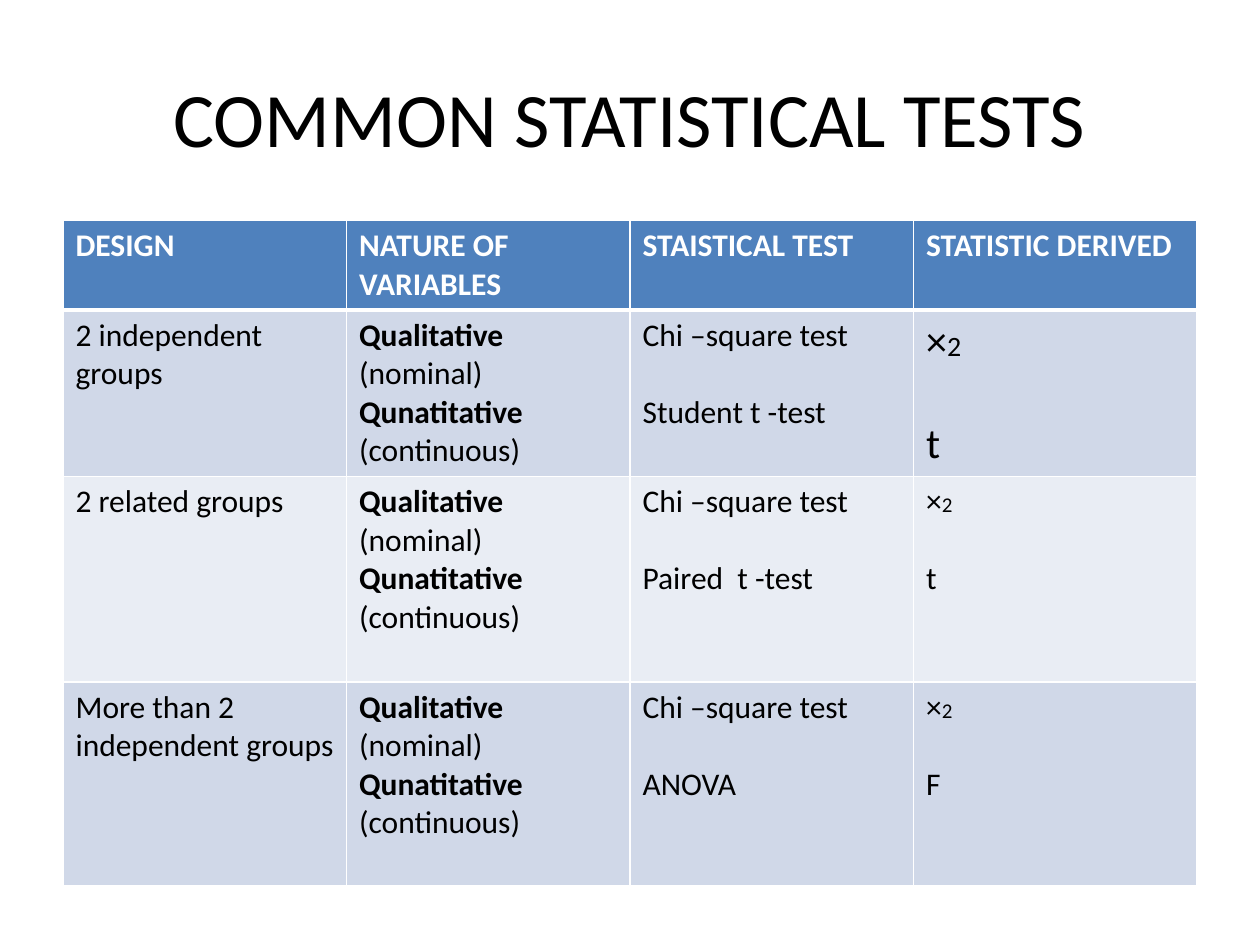
from lxml import etree
from pptx import Presentation
from pptx.dml.color import RGBColor
from pptx.enum.text import MSO_ANCHOR, PP_ALIGN
from pptx.oxml.ns import qn
from pptx.util import Inches, Pt

CENTER = PP_ALIGN.CENTER
MIDDLE = MSO_ANCHOR.MIDDLE
FONT = "Calibri"
BLUE, DARK, LIGHT = "4F81BD", "D0D8E8", "E9EDF4"
WHITE, BLACK = "FFFFFF", "000000"
LINE = 1.22

HEADS = ["DESIGN", "NATURE OF VARIABLES", "STAISTICAL TEST", "STATISTIC DERIVED"]
KINDS = [("Qualitative", True), ("(nominal)", False),
         ("Qunatitative", True), ("(continuous)", False)]
GROUPS = [
    ("2 independent groups", "Student t -test", "t", 24, 16),
    ("2 related groups", "Paired  t -test", "t", 18, 12),
    ("More than 2 independent groups", "ANOVA", "F", 18, 12),
]
HEIGHTS = [0.7, 1.32, 1.63, 1.62]


def color(code):
    return RGBColor.from_string(code)


def add_run(para, text, size=18, bold=False, ink=BLACK):
    run = para.add_run()
    run.text = text
    font = run.font
    font.name, font.size, font.bold = FONT, Pt(size), bold
    font.color.rgb = color(ink)


def add_lines(cell, lines, gap=0):
    frame = cell.text_frame
    for i, runs in enumerate(lines):
        para = frame.add_paragraph() if i else frame.paragraphs[0]
        if i and gap:
            para.space_before = Pt(gap)
        for run in runs:
            add_run(para, *run)


def add_edges(cell, top, bottom):
    props = cell._tc.get_or_add_tcPr()
    for tag, width in (("lnL", 1), ("lnR", 1), ("lnT", top), ("lnB", bottom)):
        line = etree.SubElement(props, qn("a:" + tag), w=str(Pt(width)))
        fill = etree.SubElement(line, qn("a:solidFill"))
        etree.SubElement(fill, qn("a:srgbClr"), val=WHITE)


def paint(cell, row):
    add_edges(cell, 3 if row == 1 else 1, 3 if row == 0 else 1)
    cell.fill.solid()
    cell.fill.fore_color.rgb = color(BLUE if row == 0 else DARK if row % 2 else LIGHT)


def add_title(slide, left, top, width, height):
    title = slide.shapes.title
    title.left, title.top = Inches(left), Inches(top)
    title.width, title.height = Inches(width), Inches(height)
    frame = title.text_frame
    frame.vertical_anchor = MIDDLE
    para = frame.paragraphs[0]
    para.alignment = CENTER
    add_run(para, "COMMON STATISTICAL TESTS", 44)


def add_tests(slide, left, top, width, height):
    table = slide.shapes.add_table(
        len(HEIGHTS), len(HEADS), Inches(left), Inches(top),
        Inches(width), Inches(height)).table
    for col in table.columns:
        col.width = Inches(width / len(HEADS))
    for i, tall in enumerate(HEIGHTS):
        table.rows[i].height = Inches(tall)
        for cell in table.rows[i].cells:
            paint(cell, i)
    for i, head in enumerate(HEADS):
        add_lines(table.cell(0, i), [[(head, 18, True, WHITE)]])
    for i, (group, test, sign, size, small) in enumerate(GROUPS, 1):
        add_lines(table.cell(i, 0), [[(group,)]])
        add_lines(table.cell(i, 1), [[(text, 18, bold)] for text, bold in KINDS])
        add_lines(table.cell(i, 2), [[("Chi –square test",)], [(test,)]], 18 * LINE)
        add_lines(table.cell(i, 3),
                  [[("×", size), ("2", small)], [(sign, size)]], size * LINE)


def main():
    deck = Presentation()
    deck.slide_width, deck.slide_height = Inches(10), Inches(7.5)
    slide = deck.slides.add_slide(deck.slide_layouts[5])
    add_title(slide, 0.5, 0.3, 9, 1.25)
    add_tests(slide, 0.5, 1.75, 9, sum(HEIGHTS))
    deck.save("out.pptx")


if __name__ == "__main__":
    main()
